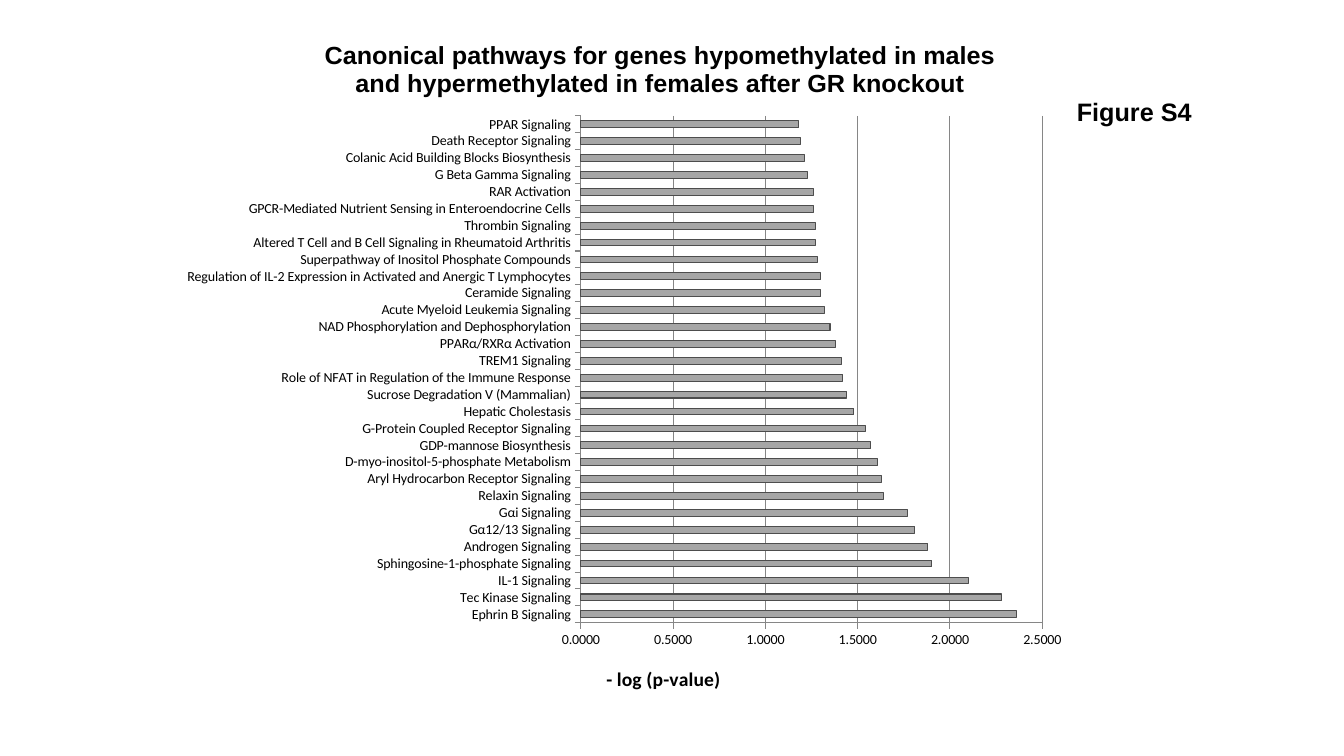
from dataclasses import dataclass

from lxml.etree import SubElement
from pptx import Presentation
from pptx.chart.data import CategoryChartData
from pptx.dml.color import RGBColor
from pptx.enum.chart import XL_CHART_TYPE, XL_TICK_MARK
from pptx.oxml.ns import qn
from pptx.util import Pt

EMU_PER_PX = 914400 / 100.8

PATHWAYS = [
    ("Ephrin B Signaling", 2.36),
    ("Tec Kinase Signaling", 2.28),
    ("IL-1 Signaling", 2.1),
    ("Sphingosine-1-phosphate Signaling", 1.9),
    ("Androgen Signaling", 1.88),
    ("Gα12/13 Signaling", 1.81),
    ("Gαi Signaling", 1.77),
    ("Relaxin Signaling", 1.64),
    ("Aryl Hydrocarbon Receptor Signaling", 1.63),
    ("D-myo-inositol-5-phosphate Metabolism", 1.61),
    ("GDP-mannose Biosynthesis", 1.57),
    ("G-Protein Coupled Receptor Signaling", 1.54),
    ("Hepatic Cholestasis", 1.48),
    ("Sucrose Degradation V (Mammalian)", 1.44),
    ("Role of NFAT in Regulation of the Immune Response", 1.42),
    ("TREM1 Signaling", 1.41),
    ("PPARα/RXRα Activation", 1.38),
    ("NAD Phosphorylation and Dephosphorylation", 1.35),
    ("Acute Myeloid Leukemia Signaling", 1.32),
    ("Ceramide Signaling", 1.3),
    ("Regulation of IL-2 Expression in Activated and Anergic T Lymphocytes", 1.3),
    ("Superpathway of Inositol Phosphate Compounds", 1.28),
    ("Altered T Cell and B Cell Signaling in Rheumatoid Arthritis", 1.27),
    ("Thrombin Signaling", 1.27),
    ("GPCR-Mediated Nutrient Sensing in Enteroendocrine Cells", 1.26),
    ("RAR Activation", 1.26),
    ("G Beta Gamma Signaling", 1.23),
    ("Colanic Acid Building Blocks Biosynthesis", 1.21),
    ("Death Receptor Signaling", 1.19),
    ("PPAR Signaling", 1.18),
]


@dataclass(frozen=True)
class Theme:
    text: RGBColor = RGBColor(0x00, 0x00, 0x00)
    bar: RGBColor = RGBColor(0xA6, 0xA6, 0xA6)
    bar_edge: RGBColor = RGBColor(0x4D, 0x4D, 0x4D)
    rule: RGBColor = RGBColor(0x86, 0x86, 0x86)
    heading_font: str = "Arial"
    body_font: str = "Calibri"
    heading_size: int = 18
    axis_title_size: int = 14
    label_size: int = 10


def px(length):
    return round(length * EMU_PER_PX)


def set_layout(parent, **settings):
    """Pin a chart part by fractions of the chart's size."""
    for old in parent.findall(qn("c:layout")):
        parent.remove(old)
    layout = SubElement(parent, qn("c:layout"))
    manual = SubElement(layout, qn("c:manualLayout"))
    for tag, value in settings.items():
        SubElement(manual, qn(f"c:{tag}")).set("val", str(value))
    return layout


class FigureSlide:
    def __init__(self, presentation, theme):
        self.theme = theme
        self.slide = presentation.slides.add_slide(presentation.slide_layouts[6])

    def style(self, font, family, size, bold=False):
        font.name, font.size, font.bold = family, Pt(size), bold
        font.color.rgb = self.theme.text

    def label(self, text, left, top, width, height):
        box = self.slide.shapes.add_textbox(px(left), px(top), px(width), px(height))
        box.text_frame.word_wrap = True
        paragraph = box.text_frame.paragraphs[0]
        paragraph.text = text
        self.style(paragraph.font, self.theme.heading_font, self.theme.heading_size, True)

    def chart_heading(self, title, text, family, size, x, y):
        paragraph = title.text_frame.paragraphs[0]
        paragraph.text = text
        self.style(paragraph.font, family, size, True)
        element = title._element
        layout = set_layout(element, xMode="edge", yMode="edge", x=x, y=y)
        element.find(qn("c:tx")).addnext(layout)

    def bar_chart(self, heading, value_heading, rows, left, top, width, height):
        theme = self.theme
        data = CategoryChartData(number_format="0.0000")
        data.categories = [name for name, _ in rows]
        data.add_series("Series 1", [value for _, value in rows])
        chart = self.slide.shapes.add_chart(
            XL_CHART_TYPE.BAR_CLUSTERED, px(left), px(top), px(width), px(height), data
        ).chart
        self.style(chart.font, theme.body_font, theme.label_size)
        chart.has_legend = False
        chart.has_title = True
        self.chart_heading(chart.chart_title, heading, theme.heading_font,
                           theme.heading_size, 0.17, 0.01)

        plot = chart.plots[0]
        plot.gap_width = 150
        plot.vary_by_categories = False
        bars = plot.series[0].format
        bars.fill.solid()
        bars.fill.fore_color.rgb = theme.bar
        bars.line.color.rgb = theme.bar_edge
        bars.line.width = Pt(0.75)

        values = chart.value_axis
        values.minimum_scale, values.maximum_scale, values.major_unit = 0, 2.5, 0.5
        values.tick_labels.number_format = "0.0000"
        values.tick_labels.number_format_is_linked = False
        values.has_major_gridlines = True
        self.chart_heading(values.axis_title, value_heading, theme.body_font,
                           theme.axis_title_size, 0.48, 0.96)
        for axis in (values, chart.category_axis):
            axis.major_tick_mark = XL_TICK_MARK.OUTSIDE
            axis.minor_tick_mark = XL_TICK_MARK.NONE
            axis.format.line.color.rgb = theme.rule
        values.major_gridlines.format.line.color.rgb = theme.rule

        plot_area = plot._element.getparent()
        plot_area.insert(0, set_layout(
            plot_area, layoutTarget="inner", xMode="edge", yMode="edge",
            x=0.456, y=0.133, w=0.506, h=0.767))


def main():
    presentation = Presentation()
    presentation.slide_width, presentation.slide_height = px(1344), px(756)
    figure = FigureSlide(presentation, Theme())
    figure.bar_chart(
        "Canonical pathways for genes hypomethylated in males and "
        "hypermethylated in females after GR knockout",
        "- log (p-value)", PATHWAYS, 165, 28, 912, 670)
    figure.label("Figure S4", 1067, 91, 185, 40)
    presentation.save("out.pptx")


if __name__ == "__main__":
    main()
